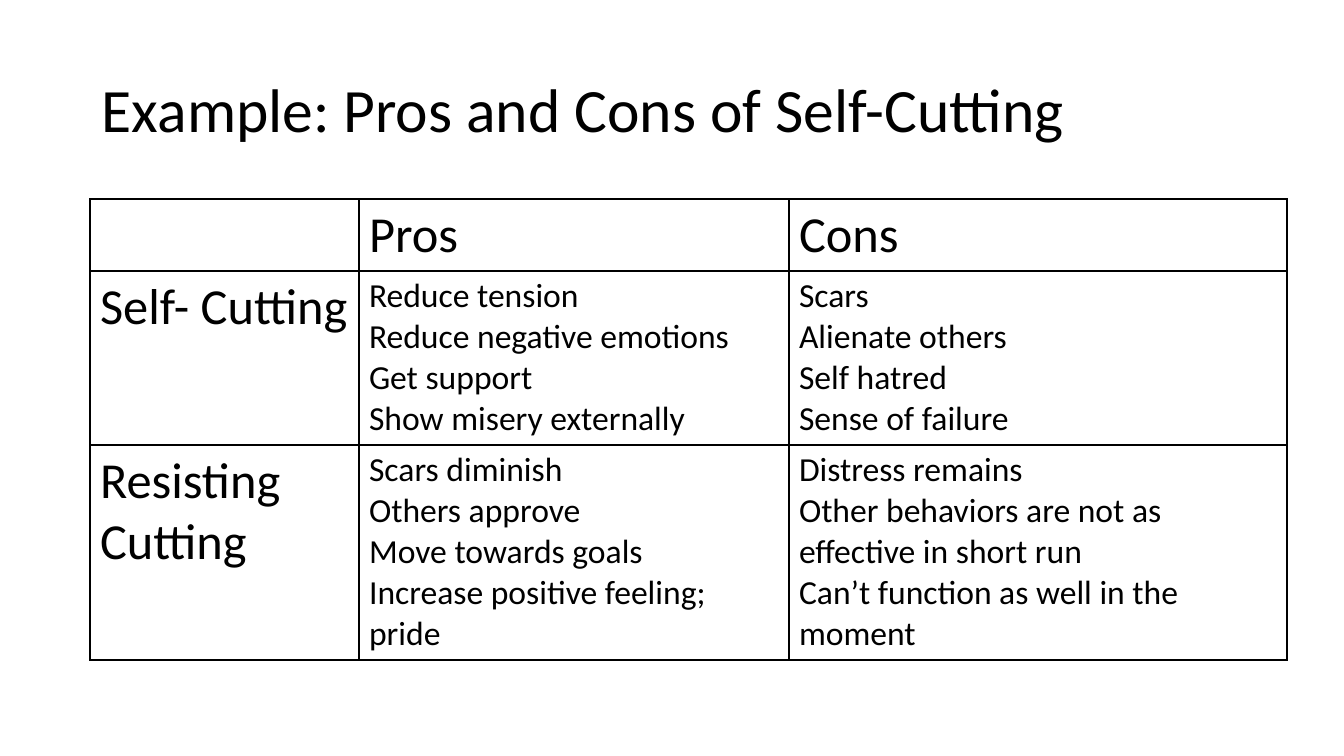
import pptx
import pptx.util
import pptx.dml.color
import pptx.enum.text
import pptx.oxml

PX = 914400 / 100.8


def px(n):
    return pptx.util.Emu(round(n * PX))


def add_text(p, text, size):
    r = p.add_run()
    r.text = text
    r.font.name = "Calibri"
    r.font.size = pptx.util.Pt(size)
    r.font.bold = False
    r.font.color.rgb = pptx.dml.color.RGBColor.from_string("000000")


prs = pptx.Presentation()
prs.slide_width = px(1344)
prs.slide_height = px(756)
s = prs.slides.add_slide(prs.slide_layouts[6])

title = s.shapes.add_textbox(px(92), px(40), px(1159), px(146))
tf = title.text_frame
tf.word_wrap = True
tf.vertical_anchor = pptx.enum.text.MSO_ANCHOR.MIDDLE
p = tf.paragraphs[0]
p.line_spacing = 0.9
add_text(p, "Example: Pros and Cons of Self-Cutting", 44)

rows = [
    [[], ["Pros"], ["Cons"]],
    [
        ["Self- Cutting"],
        ["Reduce tension", "Reduce negative emotions", "Get support", "Show misery externally"],
        ["Scars", "Alienate others", "Self hatred", "Sense of failure"],
    ],
    [
        ["Resisting Cutting"],
        ["Scars diminish", "Others approve", "Move towards goals", "Increase positive feeling; pride"],
        [
            "Distress remains",
            "Other behaviors are not as effective in short run",
            "Can’t function as well in the moment",
        ],
    ],
]
widths = [269, 430, 498]
heights = [72, 174, 215]

table = s.shapes.add_table(3, 3, px(90), px(199), px(sum(widths)), px(sum(heights))).table
table.first_row = False
table.horz_banding = False
for column, width in zip(table.columns, widths):
    column.width = px(width)

ns = "http://schemas.openxmlformats.org/drawingml/2006/main"
for i, row in enumerate(rows):
    table.rows[i].height = px(heights[i])
    for j, lines in enumerate(row):
        cell = table.cell(i, j)
        size = 36 if i == 0 or j == 0 else 24
        for k, line in enumerate(lines):
            tf = cell.text_frame
            p = tf.add_paragraph() if k else tf.paragraphs[0]
            add_text(p, line, size)
        tcPr = cell._tc.get_or_add_tcPr()
        for side in ("lnL", "lnR", "lnT", "lnB"):
            tcPr.append(pptx.oxml.parse_xml(
                f'<a:{side} xmlns:a="{ns}" w="12700"><a:solidFill>'
                f'<a:srgbClr val="000000"/></a:solidFill></a:{side}>'
            ))
        cell.fill.background()

prs.save("out.pptx")
